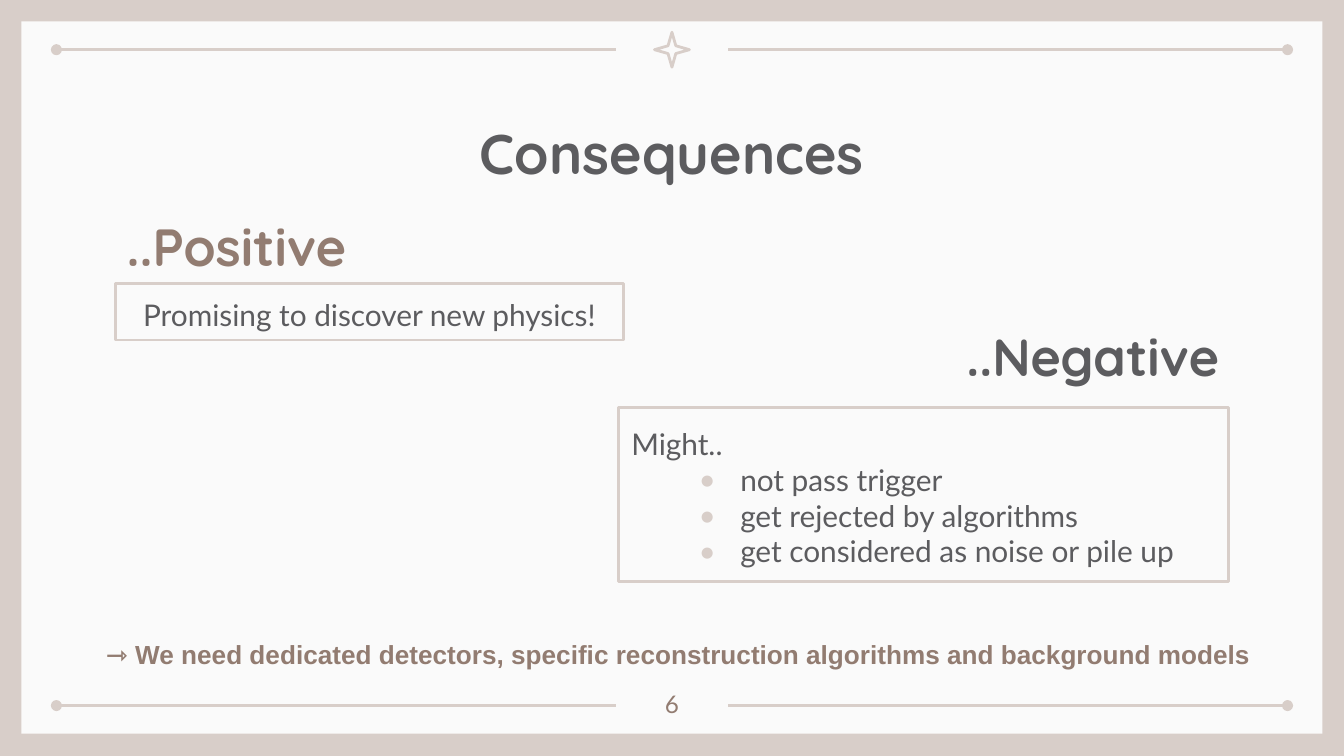
from pptx import Presentation
from pptx.dml.color import RGBColor
from pptx.enum.shapes import MSO_CONNECTOR, MSO_SHAPE
from pptx.enum.text import MSO_ANCHOR, PP_ALIGN
from pptx.oxml.ns import qn
from pptx.util import Inches, Pt
from lxml import etree

LEFT, CENTER = PP_ALIGN.LEFT, PP_ALIGN.CENTER
TOP, MIDDLE = MSO_ANCHOR.TOP, MSO_ANCHOR.MIDDLE
RECT, STAR = MSO_SHAPE.RECTANGLE, MSO_SHAPE.STAR_4_POINT
STRAIGHT = MSO_CONNECTOR.STRAIGHT

WIDTH = 10
HEIGHT = WIDTH * 9 / 16
SAND, PAPER, BROWN, GREY = "D8CEC9", "FAFAFA", "927C71", "5C5C5F"


def color(code):
    return RGBColor.from_string(code)


def stroke(line):
    line.color.rgb = color(SAND)
    line.width = Pt(1.5)
    ln = line._get_or_add_ln()
    etree.SubElement(ln, qn("a:round"))
    return ln


def add_shape(slide, kind, box, fill=None):
    """Add a filled shape without outline, or an outlined one without fill."""
    shape = slide.shapes.add_shape(kind, *map(Inches, box))
    shape.shadow.inherit = False
    if fill:
        shape.fill.solid()
        shape.fill.fore_color.rgb = color(fill)
        shape.line.fill.background()
    else:
        shape.fill.background()
        stroke(shape.line)
    return shape


def set_frame(shape, anchor, pad=0.1):
    frame = shape.text_frame
    frame.word_wrap = True
    frame.vertical_anchor = anchor
    frame.margin_left = frame.margin_right = Inches(0.1)
    frame.margin_top = frame.margin_bottom = Inches(pad)
    return frame


def add_run(para, text, size, font, code, bold=False, align=LEFT):
    para.alignment = align
    run = para.add_run()
    run.text = text
    run.font.size = Pt(size)
    run.font.name = font
    run.font.bold = bold
    run.font.color.rgb = color(code)


def add_label(slide, box, text, size, font, code, bold=True,
              align=CENTER, anchor=MIDDLE, pad=0.1):
    label = slide.shapes.add_textbox(*map(Inches, box))
    frame = set_frame(label, anchor, pad)
    add_run(frame.paragraphs[0], text, size, font, code, bold, align)


def set_bullet(para):
    props = para._p.get_or_add_pPr()
    props.set("lvl", "1")
    props.set("marL", str(Inches(0.81)))
    props.set("indent", str(Inches(-0.31)))
    tint = etree.SubElement(props, qn("a:buClr"))
    etree.SubElement(tint, qn("a:srgbClr"), val=SAND)
    etree.SubElement(props, qn("a:buFont"), typeface="Lato")
    etree.SubElement(props, qn("a:buChar"), char="•")


def add_panel(slide, box, lead, points=(), align=LEFT):
    """Add an outlined panel with a lead line and bullet points below it."""
    frame = set_frame(add_shape(slide, RECT, box), MIDDLE)
    para = frame.paragraphs[0]
    para.line_spacing = 1.15
    add_run(para, lead, 16, "Lato", GREY, align=align)
    for point in points:
        para = frame.add_paragraph()
        add_run(para, point, 16, "Lato", GREY)
        set_bullet(para)


def add_rule(slide, start, stop, y, dot):
    rule = slide.shapes.add_connector(
        STRAIGHT, *map(Inches, (start, y, stop, y)))
    etree.SubElement(stroke(rule.line), qn(dot), type="oval")
    etree.SubElement(rule._element.spPr, qn("a:effectLst"))


def add_border(slide, box):
    """Add the paper, two split rules with outer dots, and the star."""
    x, y, w, h = box
    add_shape(slide, RECT, box, PAPER)
    inset, reach, mid = 0.26, 4.42, x + w / 2
    for level in (y + 0.21, y + h - 0.21):
        add_rule(slide, x + inset, x + reach, level, "a:headEnd")
        add_rule(slide, x + w - reach, x + w - inset, level, "a:tailEnd")
    side = 0.26
    star = add_shape(slide, STAR, (mid - side / 2, y + 0.08, side, side))
    star.adjustments[0] = 0.157


def add_positive(slide, x, y):
    add_label(slide, (x - 0.1, y, 2, 0.84), "..Positive",
              28, "Quicksand", BROWN)
    add_panel(slide, (x, y + 0.7, 3.78, 0.42),
              "Promising to discover new physics!", align=CENTER)


def add_negative(slide, x, y):
    add_label(slide, (x + 1.99, y, 3.08, 0.77), "..Negative",
              28, "Quicksand", GREY)
    add_panel(slide, (x, y + 0.77, 4.54, 1.3), "Might..", (
        "not pass trigger",
        "get rejected by algorithms",
        "get considered as noise or pile up",
    ))


def main():
    deck = Presentation()
    deck.slide_width, deck.slide_height = Inches(WIDTH), Inches(HEIGHT)
    slide = deck.slides.add_slide(deck.slide_layouts[6])
    slide.background.fill.solid()
    slide.background.fill.fore_color.rgb = color(SAND)

    add_border(slide, (0.16, 0.16, 9.68, 5.3))
    add_label(slide, (2.43, 0.71, 5.14, 0.84), "Consequences",
              30, "Quicksand", GREY)
    add_positive(slide, 0.86, 1.41)
    add_negative(slide, 4.6, 2.26)
    add_label(slide, (4.7, 5.03, 0.6, 0.36), "6", 13, "Lato", BROWN,
              bold=False, anchor=TOP)
    add_label(slide, (0.69, 4.7, 9.2, 0.34),
              "⇾ We need dedicated detectors, specific reconstruction "
              "algorithms and background models",
              14, "Arial", BROWN, align=LEFT, anchor=TOP, pad=0.05)
    deck.save("out.pptx")


if __name__ == "__main__":
    main()
